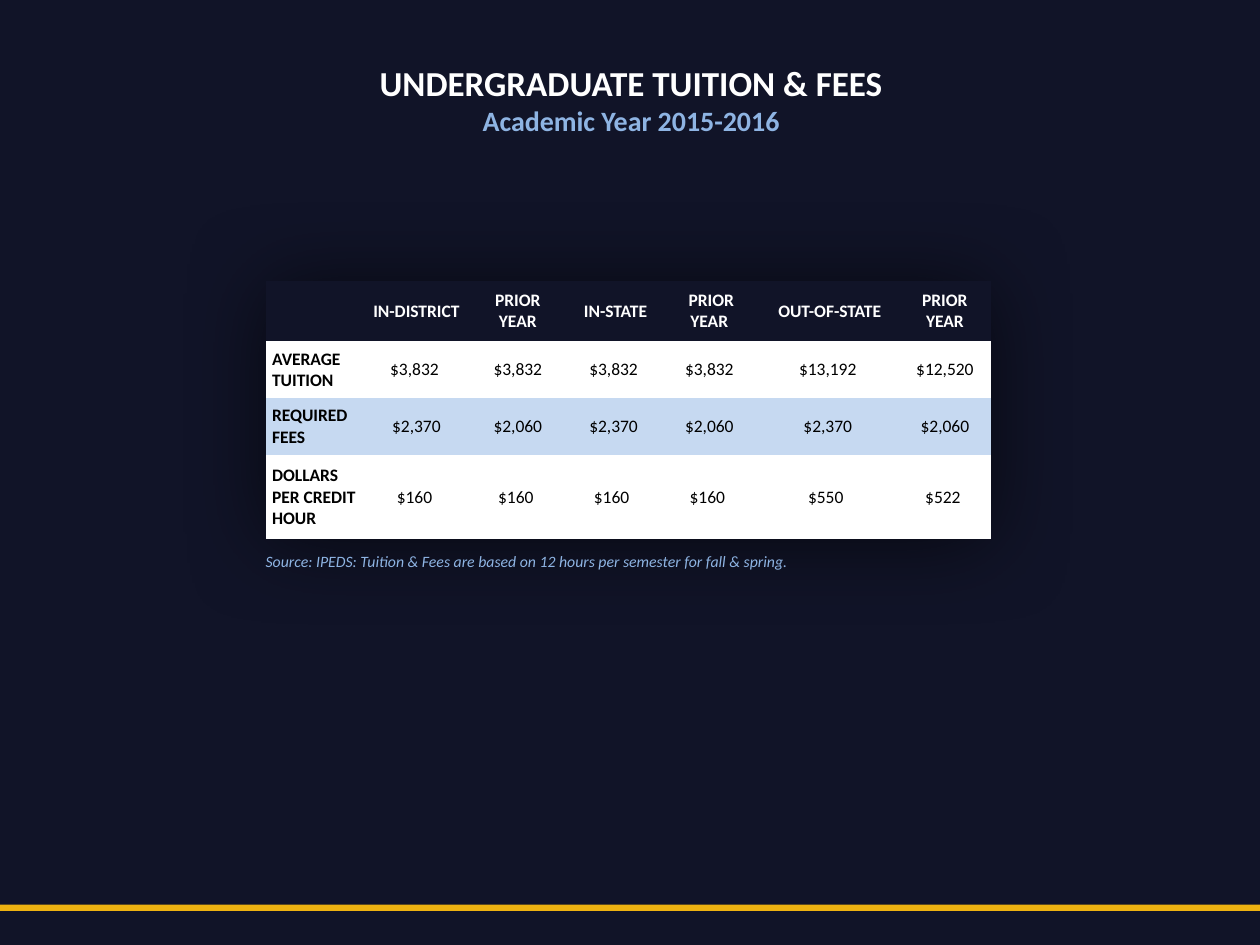
from lxml import etree
from pptx import Presentation
from pptx.dml.color import RGBColor
from pptx.enum.shapes import MSO_SHAPE
from pptx.enum.text import MSO_ANCHOR, MSO_AUTO_SIZE, PP_ALIGN
from pptx.oxml import parse_xml
from pptx.util import Inches, Pt

COLORS = {
    "navy": "111428",
    "white": "FFFFFF",
    "black": "000000",
    "sky": "8EB4E3",
    "pale": "C6D9F1",
    "gold": "EEB211",
}
PLAIN_TABLE = "{2D5ABB26-0587-4C30-8999-92F81FD0307C}"
GLOW = (
    '<a:effectLst xmlns:a="http://schemas.openxmlformats.org/drawingml/2006/main">'
    '<a:outerShdw blurRad="635000" dist="25400" dir="5400000" algn="ctr" rotWithShape="0">'
    '<a:srgbClr val="000000"><a:alpha val="60000"/></a:srgbClr>'
    "</a:outerShdw></a:effectLst>"
)

HEADERS = ["", "IN-DISTRICT", "PRIOR YEAR", " IN-STATE", " PRIOR YEAR", " OUT-OF-STATE", "PRIOR YEAR"]
FEES = [
    ["AVERAGE TUITION", "$3,832 ", "$3,832", "$3,832", "$3,832", "$13,192", "$12,520"],
    ["REQUIRED FEES", "$2,370", "$2,060", "$2,370", "$2,060", "$2,370", "$2,060"],
    ["DOLLARS PER CREDIT HOUR", "$160 ", "$160 ", "$160 ", "$160 ", "$550 ", "$522 "],
]
ROW_FILLS = ["navy", "white", "pale", "white"]
COLUMN_WIDTHS = [0.77, 0.85, 0.76, 0.76, 0.76, 1.12, 0.74]
ROW_HEIGHTS = [0.48, 0.45, 0.45, 0.67]


class TuitionSlide:
    font_name = "Calibri"

    def __init__(self, deck):
        self.slide = deck.slides.add_slide(deck.slide_layouts[5])
        self.paint(self.slide.background, "navy")

    def paint(self, target, color):
        target.fill.solid()
        target.fill.fore_color.rgb = RGBColor.from_string(COLORS[color])

    def style(self, paragraph, size, color, bold=False, italic=False, align=PP_ALIGN.LEFT):
        paragraph.alignment = align
        font = paragraph.font
        font.name, font.size = self.font_name, Pt(size)
        font.bold, font.italic = bold, italic
        font.color.rgb = RGBColor.from_string(COLORS[color])

    def title(self, heading, subheading, left, top, width, height):
        title = self.slide.shapes.title
        title.left, title.top = Inches(left), Inches(top)
        title.width, title.height = Inches(width), Inches(height)
        frame = title.text_frame
        frame.auto_size = MSO_AUTO_SIZE.NONE
        frame.vertical_anchor = MSO_ANCHOR.TOP
        frame.text = f"{heading}\n{subheading}"
        for paragraph, size, color in zip(frame.paragraphs, (20, 16), ("white", "sky")):
            self.style(paragraph, size, color, bold=True, align=PP_ALIGN.CENTER)

    def table(self, rows, left, top):
        fees = self.slide.shapes.add_table(
            len(rows), len(COLUMN_WIDTHS), Inches(left), Inches(top),
            Inches(sum(COLUMN_WIDTHS)), Inches(sum(ROW_HEIGHTS)),
        ).table
        properties = fees._tbl.tblPr
        properties[0].text = PLAIN_TABLE
        properties.insert(0, parse_xml(GLOW))
        for column, width in zip(fees.columns, COLUMN_WIDTHS):
            column.width = Inches(width)
        for row, height in zip(fees.rows, ROW_HEIGHTS):
            row.height = Inches(height)
        for r, texts in enumerate(rows):
            for c, text in enumerate(texts):
                self.cell(fees.cell(r, c), text, ROW_FILLS[r], r == 0, c == 0)

    def cell(self, cell, text, fill, is_header, is_label):
        self.paint(cell, fill)
        cell.vertical_anchor = MSO_ANCHOR.MIDDLE
        cell.margin_left = cell.margin_right = Inches(0.05)
        cell.margin_top = cell.margin_bottom = Inches(0.05)
        cell.text = text
        self.style(
            cell.text_frame.paragraphs[0], 10, "white" if is_header else "black",
            bold=is_header or is_label,
            align=PP_ALIGN.LEFT if is_label else PP_ALIGN.CENTER,
        )

    def note(self, text, left, top, width, height):
        frame = self.slide.shapes.add_textbox(
            Inches(left), Inches(top), Inches(width), Inches(height)
        ).text_frame
        frame.word_wrap = True
        frame.text = text
        self.style(frame.paragraphs[0], 9, "sky", italic=True)

    def bar(self, left, top, width, height):
        stripe = self.slide.shapes.add_shape(
            MSO_SHAPE.RECTANGLE, Inches(left), Inches(top), Inches(width), Inches(height)
        )
        stripe.shadow.inherit = False
        self.paint(stripe, "gold")
        stripe.line.fill.background()


def main():
    deck = Presentation()
    deck.slide_width, deck.slide_height = Inches(10), Inches(7.5)
    page = TuitionSlide(deck)
    page.title("UNDERGRADUATE TUITION & FEES", "Academic Year 2015-2016", 1.73, 0.44, 6.56, 1.01)
    page.table([HEADERS] + FEES, 2.11, 2.23)
    page.note(
        "Source: IPEDS: Tuition & Fees are based on 12 hours per semester for fall & spring.",
        2.01, 4.33, 4.99, 0.25,
    )
    page.bar(0, 7.18, 10, 0.05)
    deck.save("out.pptx")


if __name__ == "__main__":
    main()
